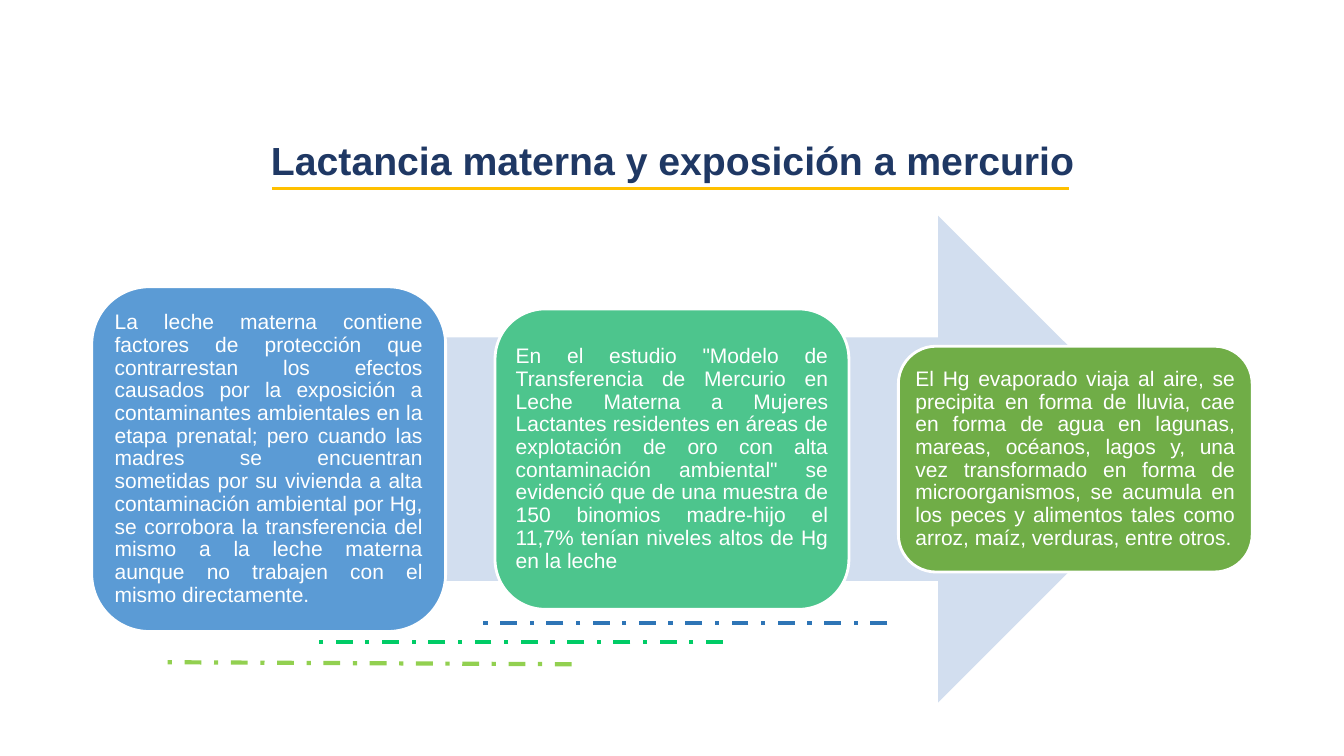
from dataclasses import dataclass

from lxml.etree import SubElement
from pptx import Presentation
from pptx.dml.color import RGBColor
from pptx.enum.dml import MSO_LINE
from pptx.enum.shapes import MSO_CONNECTOR, MSO_SHAPE
from pptx.enum.text import MSO_ANCHOR, MSO_AUTO_SIZE, PP_ALIGN
from pptx.oxml.ns import qn
from pptx.shapes.autoshape import Shape
from pptx.slide import Slide
from pptx.util import Inches, Length, Pt


@dataclass(frozen=True)
class Theme:
    font: str = "Arial"
    title_size: float = 28
    body_size: float = 15
    line_spacing: float = 0.9
    navy: str = "1F3864"
    gold: str = "FFC000"
    pale_blue: str = "D2DEEF"
    blue: str = "5B9BD5"
    mint: str = "4DC58D"
    green: str = "70AD47"
    lime: str = "92D050"
    emerald: str = "00CC66"
    deep_blue: str = "2E75B6"
    white: str = "FFFFFF"


@dataclass(frozen=True)
class Card:
    message: str
    color: str
    rows: float


@dataclass(frozen=True)
class Rule:
    start: tuple[float, float]
    end: tuple[float, float]
    color: str
    weight: float = 3
    dash: MSO_LINE | None = MSO_LINE.DASH_DOT


THEME = Theme()
GRID_STEP = 0.1
MIDDLE_ROW = 45.55
FIRST_COLUMN = 9.1
CARD_COLUMNS = 35.1
CARD_PITCH = 40
CARD_INSET = 0.6

CARDS = [
    Card(
        "La leche materna contiene factores de protección que contrarrestan los efectos "
        "causados por la exposición a contaminantes ambientales en la etapa prenatal; pero "
        "cuando las madres se encuentran sometidas por su vivienda a alta contaminación "
        "ambiental por Hg, se corrobora la transferencia del mismo a la leche materna "
        "aunque no trabajen con el mismo directamente.",
        THEME.blue, 34.2,
    ),
    Card(
        'En el estudio "Modelo de Transferencia de Mercurio en Leche Materna a Mujeres '
        "Lactantes residentes en áreas de explotación de oro con alta contaminación "
        'ambiental" se evidenció que de una muestra de 150 binomios madre-hijo el 11,7% '
        "tenían niveles altos de Hg en la leche",
        THEME.mint, 29.8,
    ),
    Card(
        "El Hg evaporado viaja al aire, se precipita en forma de lluvia, cae en forma de "
        "agua en lagunas, mareas, océanos, lagos y, una vez transformado en forma de "
        "microorganismos, se acumula en los peces y alimentos tales como arroz, maíz, "
        "verduras, entre otros.",
        THEME.green, 22.4,
    ),
]

TITLE_RULE = Rule((27, 18.7), (106, 18.7), THEME.gold, 2.25, None)
ACCENT_RULES = [
    Rule((56.7, 65.9), (16.4, 65.7), THEME.lime),
    Rule((71.7, 63.7), (31.4, 63.7), THEME.emerald),
    Rule((88, 61.8), (47.7, 61.8), THEME.deep_blue),
]


def grid(count: float) -> Length:
    return Inches(count * GRID_STEP)


def write(shape: Shape, text: str, *, size: float, color: str, align: PP_ALIGN,
          bold: bool = False, inset: float | None = None) -> None:
    frame = shape.text_frame
    frame.text = text
    frame.word_wrap = True
    frame.auto_size = MSO_AUTO_SIZE.NONE
    frame.vertical_anchor = MSO_ANCHOR.MIDDLE
    if inset is not None:
        frame.margin_left = frame.margin_right = grid(inset)
        frame.margin_top = frame.margin_bottom = grid(inset)
    paragraph = frame.paragraphs[0]
    paragraph.alignment = align
    paragraph.line_spacing = THEME.line_spacing
    font = paragraph.runs[0].font
    font.name = THEME.font
    font.size = Pt(size)
    font.bold = bold
    font.color.rgb = RGBColor.from_string(color)


def draw_title(slide: Slide, text: str) -> None:
    title = slide.shapes.title
    title.left, title.top = grid(9.2), grid(8.6)
    title.width, title.height = grid(115), grid(15.1)
    write(title, text, size=THEME.title_size, color=THEME.navy,
          align=PP_ALIGN.CENTER, bold=True)


def draw_centered(slide: Slide, preset: MSO_SHAPE, column: float, columns: float,
                  rows: float, color: str) -> Shape:
    shape = slide.shapes.add_shape(
        preset, grid(column), grid(MIDDLE_ROW - rows / 2), grid(columns), grid(rows))
    shape.shadow.inherit = False
    shape.fill.solid()
    shape.fill.fore_color.rgb = RGBColor.from_string(color)
    shape.line.fill.background()
    return shape


def draw_card(slide: Slide, card: Card, position: int) -> None:
    panel = draw_centered(slide, MSO_SHAPE.ROUNDED_RECTANGLE,
                          FIRST_COLUMN + position * CARD_PITCH,
                          CARD_COLUMNS, card.rows, card.color)
    panel.line.color.rgb = RGBColor.from_string(THEME.white)
    panel.line.width = Pt(2)
    write(panel, card.message, size=THEME.body_size, color=THEME.white,
          align=PP_ALIGN.JUSTIFY, inset=CARD_INSET)


def draw_rule(slide: Slide, rule: Rule) -> None:
    connector = slide.shapes.add_connector(
        MSO_CONNECTOR.STRAIGHT, *map(grid, rule.start + rule.end))
    connector.line.color.rgb = RGBColor.from_string(rule.color)
    connector.line.width = Pt(rule.weight)
    if rule.dash is not None:
        connector.line.dash_style = rule.dash
    SubElement(connector.element.spPr, qn("a:effectLst"))


def main() -> None:
    presentation = Presentation()
    presentation.slide_width = Inches(13.33)
    presentation.slide_height = Inches(7.5)
    slide = presentation.slides.add_slide(presentation.slide_layouts[5])
    draw_title(slide, "Lactancia materna y exposición a mercurio")
    draw_rule(slide, TITLE_RULE)
    draw_centered(slide, MSO_SHAPE.RIGHT_ARROW, 16.1, 101.1, 48.3, THEME.pale_blue)
    for position, card in enumerate(CARDS):
        draw_card(slide, card, position)
    for rule in ACCENT_RULES:
        draw_rule(slide, rule)
    presentation.save("out.pptx")


if __name__ == "__main__":
    main()
